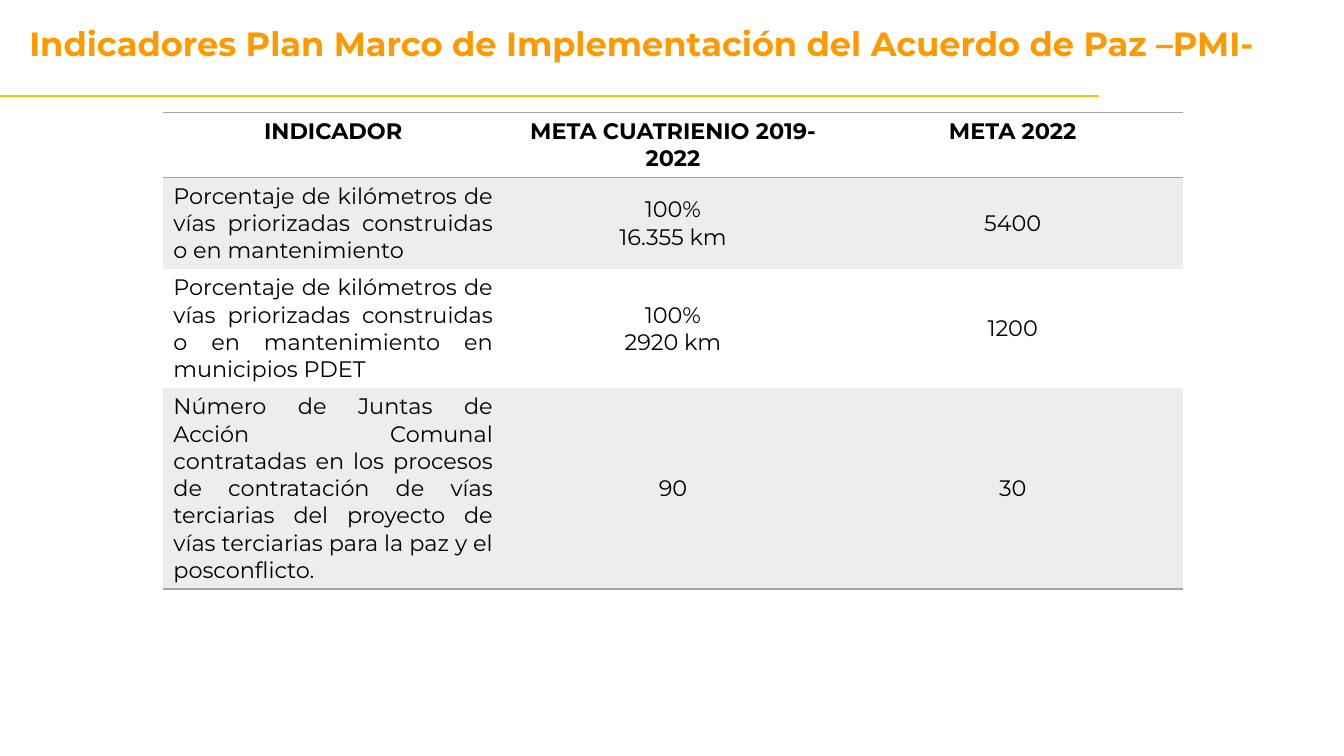
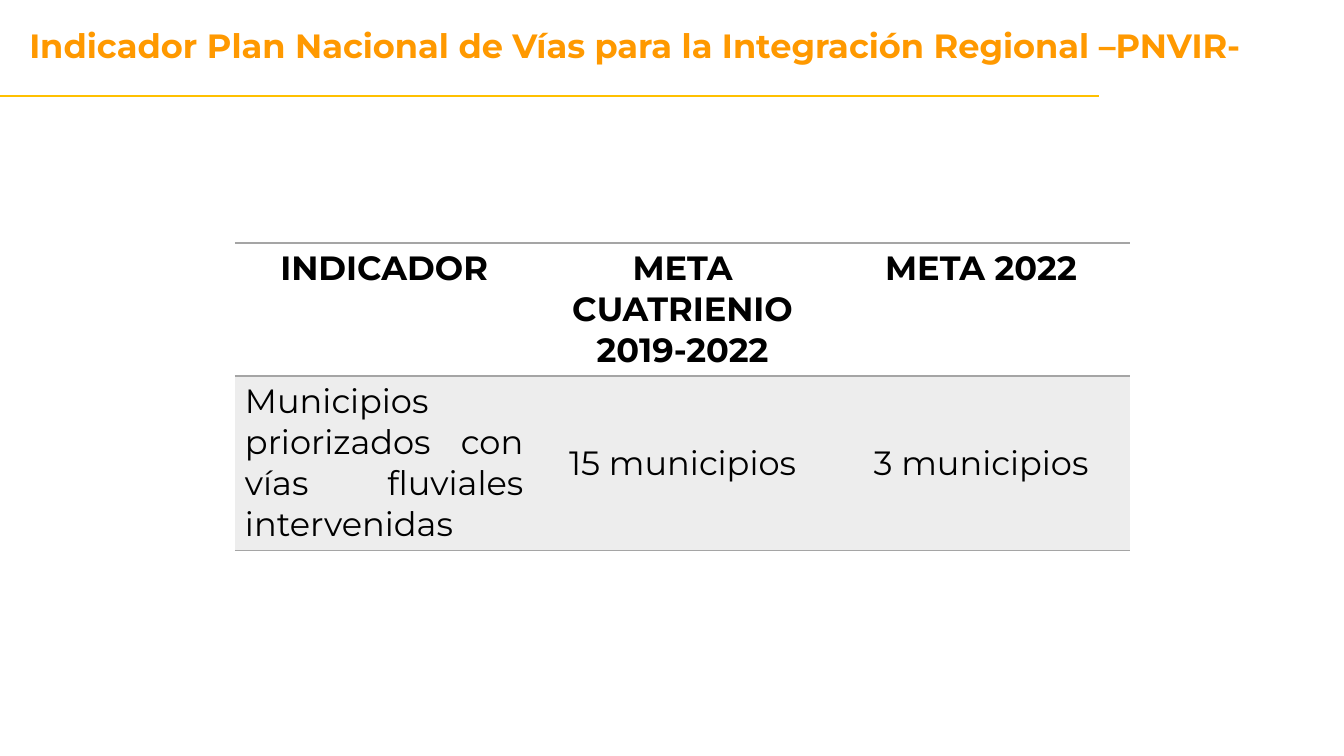
"""Build two slides with the road indicators of the PMI and PNVIR plans."""
from lxml.etree import SubElement
from pptx import Presentation
from pptx.dml.color import RGBColor
from pptx.enum.shapes import MSO_CONNECTOR
from pptx.enum.text import MSO_ANCHOR, MSO_AUTO_SIZE, PP_ALIGN
from pptx.oxml.ns import qn
from pptx.util import Inches, Pt

FONT = "Montserrat"
COLORS = {"title": "FF9900", "rule": "FFC000", "text": "000000",
          "border": "A5A5A5", "band": "EDEDED"}
NO_STYLE = "{2D5ABB26-0587-4C30-8999-92F81FD0307C}"
HEADINGS = ["INDICADOR", "META CUATRIENIO 2019-2022", "META 2022"]

PLANS = [
    {"title": "Indicadores Plan Marco de Implementación del Acuerdo de Paz –PMI-",
     "title_top": 0.18, "left": 1.62, "top": 1.12, "column": 3.37, "size": 16,
     "heights": [0.64, 0.91, 1.18, 1.99],
     "indicators": [
         ["Porcentaje de kilómetros de vías priorizadas construidas o en mantenimiento",
          "100%\n16.355 km", "5400"],
         ["Porcentaje de kilómetros de vías priorizadas construidas o en mantenimiento "
          "en municipios PDET",
          "100%\n2920 km", "1200"],
         ["Número de Juntas de Acción Comunal contratadas en los procesos de contratación "
          "de vías terciarias del proyecto de vías terciarias para la paz y el posconflicto.",
          "90", "30"]]},
    {"title": "Indicador Plan Nacional de Vías para la Integración Regional –PNVIR-",
     "title_top": 0.2, "left": 2.33, "top": 2.41, "column": 2.96, "size": 24,
     "heights": [1.32, 1.73],
     "indicators": [
         ["Municipios priorizados con vías fluviales intervenidas",
          "15 municipios", "3 municipios"]]},
]


def add_text(paragraph, text, size, color, bold, align):
    paragraph.alignment = align
    run = paragraph.add_run()
    run.text = text
    run.font.name = FONT
    run.font.size = Pt(size)
    run.font.bold = bold
    run.font.color.rgb = RGBColor.from_string(COLORS[color])


def add_border(cell, side):
    border = SubElement(cell._tc.get_or_add_tcPr(), qn(f"a:{side}"), w=str(Pt(1)))
    fill = SubElement(border, qn("a:solidFill"))
    SubElement(fill, qn("a:srgbClr"), val=COLORS["border"])


prs = Presentation()
prs.slide_width = Inches(13.33)
prs.slide_height = Inches(7.5)

for plan in PLANS:
    slide = prs.slides.add_slide(prs.slide_layouts[5])

    title = slide.shapes.title
    title.left, title.top = Inches(0.19), Inches(plan["title_top"])
    title.width, title.height = Inches(13), Inches(0.5)
    title.text_frame.auto_size = MSO_AUTO_SIZE.NONE
    title.text_frame.vertical_anchor = MSO_ANCHOR.TOP
    add_text(title.text_frame.paragraphs[0], plan["title"], 24, "title", True, PP_ALIGN.LEFT)

    rule = slide.shapes.add_connector(
        MSO_CONNECTOR.STRAIGHT, 0, Inches(0.95), Inches(10.9), Inches(0.95))
    rule.line.color.rgb = RGBColor.from_string(COLORS["rule"])
    rule.line.width = Pt(1.5)
    SubElement(rule._element.spPr, qn("a:effectLst"))

    rows = [HEADINGS] + plan["indicators"]
    goals = slide.shapes.add_table(
        len(rows), len(HEADINGS), Inches(plan["left"]), Inches(plan["top"]),
        Inches(plan["column"] * len(HEADINGS)), Inches(sum(plan["heights"]))).table
    goals.first_row = goals.horz_banding = False
    goals._tbl.tblPr.find(qn("a:tableStyleId")).text = NO_STYLE
    for column in goals.columns:
        column.width = Inches(plan["column"])

    for r, texts in enumerate(rows):
        goals.rows[r].height = Inches(plan["heights"][r])
        heading = r == 0
        for c, text in enumerate(texts):
            cell = goals.cell(r, c)
            indicator = c == 0 and not heading
            if heading:
                add_border(cell, "lnT")
            if heading or r == len(rows) - 1:
                add_border(cell, "lnB")
            if r % 2:
                cell.fill.solid()
                cell.fill.fore_color.rgb = RGBColor.from_string(COLORS["band"])
            else:
                cell.fill.background()
            cell.vertical_anchor = MSO_ANCHOR.TOP if heading or c == 0 else MSO_ANCHOR.MIDDLE
            for i, line in enumerate(text.split("\n")):
                frame = cell.text_frame
                paragraph = frame.add_paragraph() if i else frame.paragraphs[0]
                add_text(paragraph, line, plan["size"], "text", heading,
                         PP_ALIGN.JUSTIFY if indicator else PP_ALIGN.CENTER)

prs.save("out.pptx")
